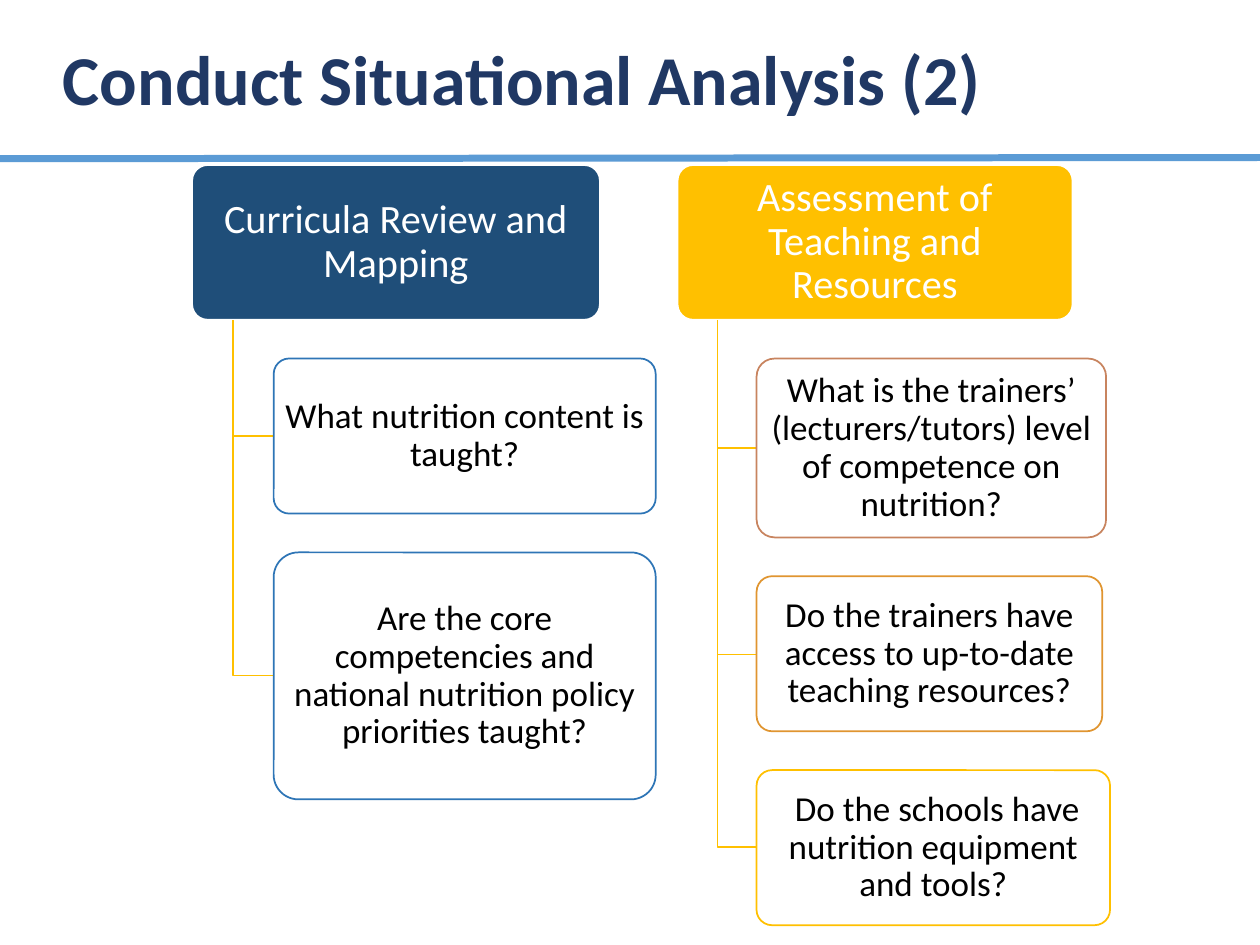
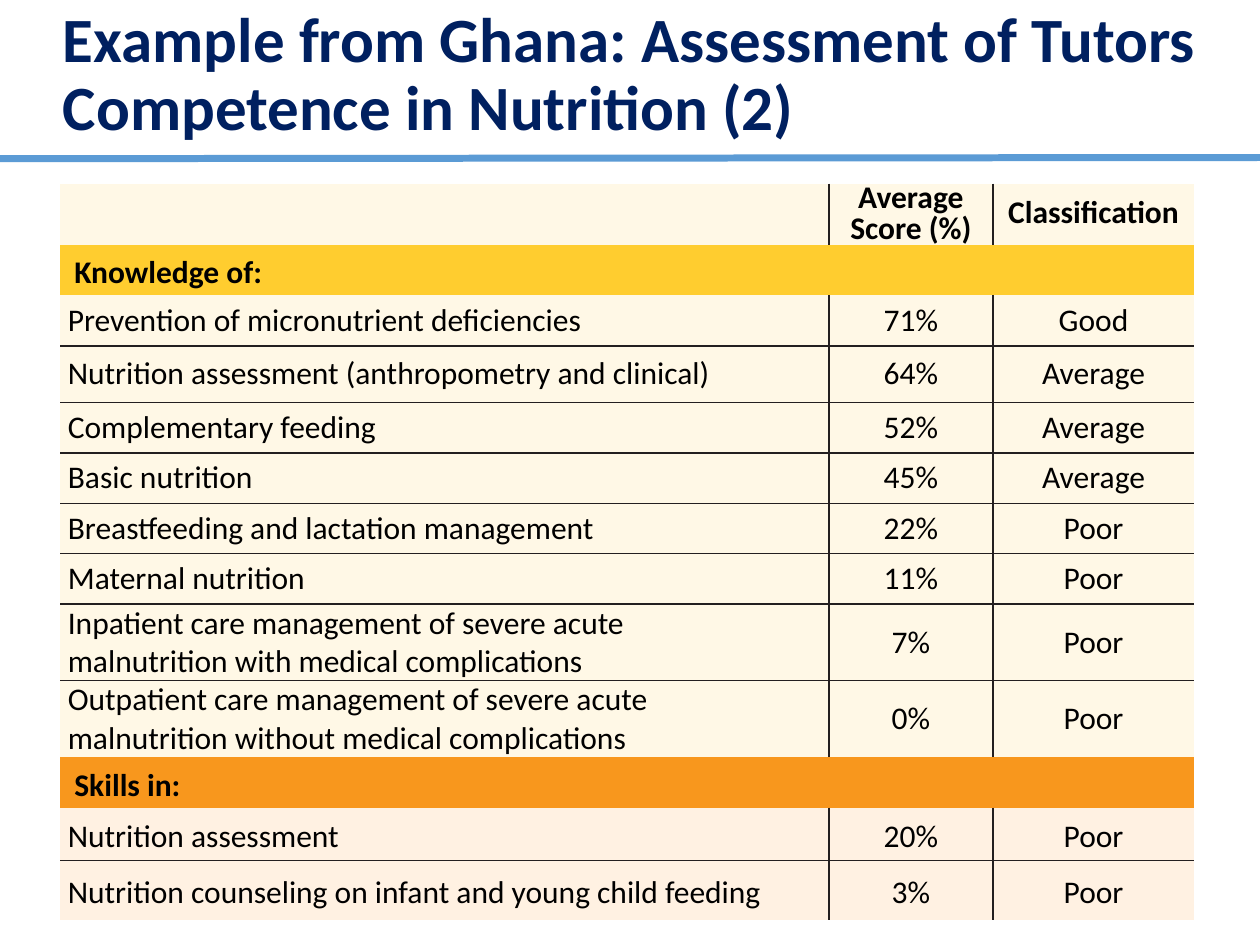
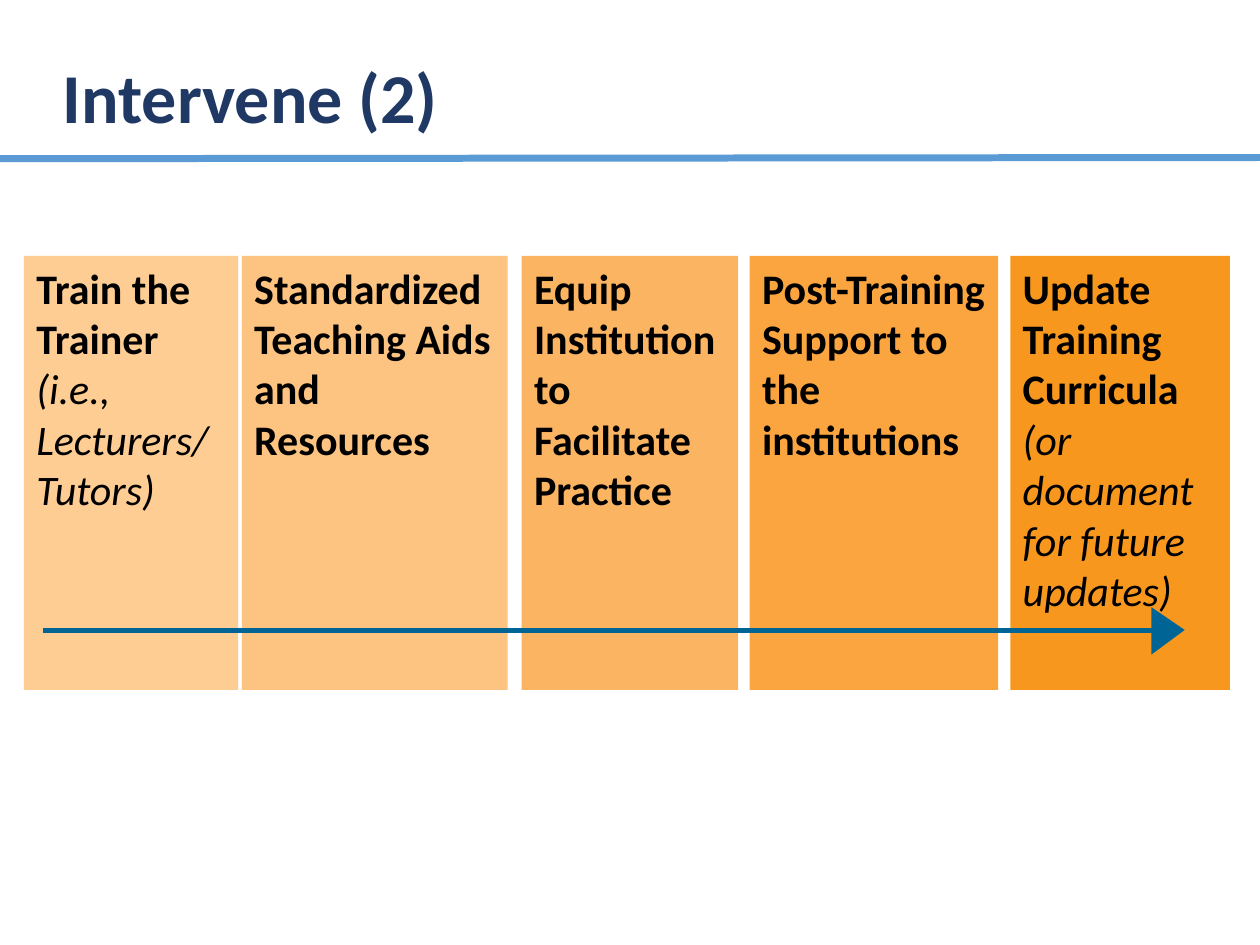
import dataclasses

import pptx
import pptx.dml.color
import pptx.enum.shapes
import pptx.enum.text
import pptx.oxml
import pptx.oxml.ns
import pptx.util

Pt = pptx.util.Pt
SHAPE = pptx.enum.shapes.MSO_SHAPE
ALIGN = pptx.enum.text.PP_ALIGN
ANCHOR = pptx.enum.text.MSO_ANCHOR


@dataclasses.dataclass(frozen=True)
class Theme:
    font: str = "Calibri"
    title: str = "203864"
    title_dark: str = "002060"
    rule: str = "5B9BD5"
    text: str = "000000"
    white: str = "FFFFFF"
    navy: str = "1F4E79"
    blue: str = "2E75B6"
    gold: str = "FFC000"
    copper: str = "C8845F"
    amber: str = "E09530"
    cell_line: str = "231F20"
    cream: str = "FFF8E6"
    peach: str = "FFF1E2"
    knowledge: str = "FFCD2F"
    skills: str = "F8971D"
    arrow: str = "006594"
    steps: tuple = ("FECD94", "FDC380", "FBB461", "FAA53F", "F8971D")
    title_size: float = 40
    title_small: float = 36
    head_size: float = 23
    box_size: float = 20
    cell_size: float = 18
    step_size: float = 24


THEME = Theme()


def rgb(color):
    return pptx.dml.color.RGBColor.from_string(color)


def write(tf, paragraphs, size, color=THEME.text, bold=False, align=ALIGN.LEFT,
          spacing=1.0, anchor=ANCHOR.MIDDLE, insets=None):
    """Fill a text frame; a paragraph is a string or a list of (text, italic) runs."""
    tf.word_wrap = True
    tf.vertical_anchor = anchor
    if insets:
        tf.margin_left = tf.margin_right = Pt(insets[0])
        tf.margin_top = tf.margin_bottom = Pt(insets[1])
    for i, runs in enumerate(paragraphs):
        p = tf.add_paragraph() if i else tf.paragraphs[0]
        p.alignment = align
        p.line_spacing = spacing
        for text, italic in ([(runs, False)] if isinstance(runs, str) else runs):
            r = p.add_run()
            r.text = text
            r.font.name = THEME.font
            r.font.size = Pt(size)
            r.font.bold = bold and not italic
            r.font.italic = italic
            r.font.color.rgb = rgb(color)


def set_borders(cell, sides):
    """Draw the named sides (L, R, T, B) of a cell and blank the others."""
    tcPr = cell._tc.get_or_add_tcPr()
    for i, side in enumerate("LRTB"):
        paint = (f'<a:solidFill><a:srgbClr val="{THEME.cell_line}"/></a:solidFill>'
                 if side in sides else "<a:noFill/>")
        tcPr.insert(i, pptx.oxml.parse_xml(
            f'<a:ln{side} {pptx.oxml.ns.nsdecls("a")} w="{Pt(1)}">{paint}</a:ln{side}>'))


class Deck:
    def __init__(self):
        self.prs = pptx.Presentation()
        self.prs.slide_width, self.prs.slide_height = Pt(720), Pt(540)
        self.s = None

    def slide(self, title, height, size=THEME.title_size, color=THEME.title):
        """Start a slide with its title, centred in the given height, and the rule."""
        self.s = self.prs.slides.add_slide(self.prs.slide_layouts[6])
        sp = self.s.shapes.add_textbox(0, 0, Pt(720), Pt(height))
        write(sp.text_frame, [title], size, color, bold=True, spacing=0.9, insets=(36, 3.6))
        self.line(0, 90.7, 720, 90, THEME.rule, 4)

    def line(self, x1, y1, x2, y2, color, width):
        sp = self.s.shapes.add_connector(
            pptx.enum.shapes.MSO_CONNECTOR.STRAIGHT, Pt(x1), Pt(y1), Pt(x2), Pt(y2))
        sp.line.color.rgb = rgb(color)
        sp.line.width = Pt(width)
        sp._element.spPr.append(
            pptx.oxml.parse_xml(f'<a:effectLst {pptx.oxml.ns.nsdecls("a")}/>'))

    def paint(self, sp, fill=None, line=None):
        sp.shadow.inherit = False
        if fill:
            sp.fill.solid()
            sp.fill.fore_color.rgb = rgb(fill)
        else:
            sp.fill.background()
        if line:
            sp.line.color.rgb = rgb(line)
            sp.line.width = Pt(1)
        else:
            sp.line.fill.background()

    def box(self, kind, x, y, w, h, paragraphs, fill, line=None, **fmt):
        sp = self.s.shapes.add_shape(kind, Pt(x), Pt(y), Pt(w), Pt(h))
        if kind == SHAPE.ROUNDED_RECTANGLE:
            sp.adjustments[0] = 0.1
        self.paint(sp, fill, line)
        write(sp.text_frame, paragraphs, **fmt)

    def outline(self, points, fill=None, line=None, close=False):
        fb = self.s.shapes.build_freeform(*points[0], scale=Pt(1))
        fb.add_line_segments(points[1:], close=close)
        self.paint(fb.convert_to_shape(), fill, line)

    def table(self, x, y, widths, heights):
        table = self.s.shapes.add_table(
            len(heights), len(widths), Pt(x), Pt(y), Pt(sum(widths)), Pt(sum(heights))).table
        table.first_row = table.horz_banding = False
        for column, width in zip(table.columns, widths):
            column.width = Pt(width)
        for row, height in zip(table.rows, heights):
            row.height = Pt(height)
        return table

    def cell(self, cell, paragraphs, fill, sides="", left=0, right=0, **fmt):
        cell.fill.solid()
        cell.fill.fore_color.rgb = rgb(fill)
        set_borders(cell, sides)
        cell.margin_left, cell.margin_right = Pt(left), Pt(right)
        cell.margin_top = cell.margin_bottom = 0
        cell.vertical_anchor = ANCHOR.MIDDLE
        write(cell.text_frame, paragraphs, THEME.cell_size, anchor=None, **fmt)


def branch(deck, x, w, head, fill, children):
    """Draw a heading and, below it, its children joined to one trunk."""
    top, head_h, gap = 94.3, 88.4, 22.2
    style = dict(align=ALIGN.CENTER, spacing=0.9, insets=(3, 2))
    bottom = top + head_h
    trunk, left = x + 0.1 * w, x + 0.2 * w
    y = bottom + gap
    deck.box(SHAPE.ROUNDED_RECTANGLE, x, top, w, head_h, [head], fill, THEME.white,
             size=THEME.head_size, color=THEME.white, **style)
    for text, child_w, child_h, line in children:
        middle = y + child_h / 2
        deck.outline([(trunk, bottom), (trunk, middle), (left, middle)], line=THEME.gold)
        deck.box(SHAPE.ROUNDED_RECTANGLE, left, y, child_w, child_h, [text], THEME.white, line,
                 size=THEME.box_size, **style)
        y += child_h + gap


def situational_analysis(deck):
    deck.slide("Conduct Situational Analysis (2)", 94.3)
    branch(deck, 109.8, 233, "Curricula Review and Mapping", THEME.navy, [
        ("What nutrition content is taught?", 218.3, 88.6, THEME.blue),
        ("Are the core competencies and national nutrition policy priorities taught?",
         218.3, 141.1, THEME.blue),
    ])
    branch(deck, 387.2, 225.7, "Assessment of Teaching and Resources", THEME.gold, [
        ("What is the trainers’ (lecturers/tutors) level of competence on nutrition?",
         199.7, 102.2, THEME.copper),
        ("Do the trainers have access to up-to-date teaching resources?",
         197.5, 88.6, THEME.amber),
        (" Do the schools have nutrition equipment and tools?", 202, 88.6, THEME.gold),
    ])


def tutor_competence(deck):
    sections = [
        ("Knowledge of:", THEME.knowledge, THEME.cream, 1.0, [
            ("Prevention of micronutrient deficiencies", "71%", "Good", 28.8),
            ("Nutrition assessment (anthropometry and clinical)", "64%", "Average", 32.4),
            ("Complementary feeding", "52%", "Average", 28.8),
            ("Basic nutrition", "45%", "Average", 28.8),
            ("Breastfeeding and lactation management", "22%", "Poor", 28.8),
            ("Maternal nutrition", "11%", "Poor", 28.8),
            ("Inpatient care management of severe acute malnutrition with medical complications",
             "7%", "Poor", 43.8),
            ("Outpatient care management of severe acute malnutrition without medical "
             "complications", "0%", "Poor", 43.8),
        ]),
        ("Skills in:", THEME.skills, THEME.peach, 1.15, [
            ("Nutrition assessment", "20%", "Poor", 30.2),
            ("Nutrition counseling on infant and young child feeding", "3%", "Poor", 33.8),
        ]),
    ]
    verticals = ("R", "LR", "L")
    deck.slide("Example from Ghana: Assessment of Tutors Competence in Nutrition (2)", 87,
               THEME.title_small, THEME.title_dark)
    heights = [35]
    for *_, rows in sections:
        heights += [28.8] + [row[-1] for row in rows]
    table = deck.table(34.5, 105, [439.2, 93.6, 115.2], heights)

    heads = ([""], ["Average", "Score (%)"], ["Classification"])
    for col, head in enumerate(heads):
        deck.cell(table.cell(0, col), head, THEME.cream, verticals[col],
                  bold=True, align=ALIGN.CENTER, spacing=0.8)
    row = 1
    for label, band, fill, spacing, rows in sections:
        table.cell(row, 0).merge(table.cell(row, 2))
        deck.cell(table.cell(row, 0), [label], band, left=8, bold=True, spacing=1.15)
        for i, (*values, _) in enumerate(rows):
            row += 1
            level = ("T" if i else "") + ("B" if i < len(rows) - 1 else "")
            for col, value in enumerate(values):
                place = dict(align=ALIGN.CENTER) if col else dict(left=4.3, right=30)
                deck.cell(table.cell(row, col), [value], fill, verticals[col] + level,
                          spacing=spacing, **place)
        row += 1


def intervene(deck):
    deck.slide("Intervene (2)", 115.2)
    steps = [
        (13.7, 122.4, [("Train the Trainer ", False), ("(i.e., Lecturers/ Tutors)", True)]),
        (138.2, 152, "Standardized Teaching Aids and Resources"),
        (298.1, 123.8, "Equip Institution to Facilitate Practice"),
        (428.4, 142, "Post-Training Support to the institutions"),
        (577.3, 125.5, [("Update Training Curricula ", False),
                        ("(or document for future updates)", True)]),
    ]
    for (x, w, text), fill in zip(steps, THEME.steps):
        deck.box(SHAPE.RECTANGLE, x, 146.2, w, 248, [text], fill, size=THEME.step_size,
                 bold=True, anchor=ANCHOR.TOP, insets=(7.2, 3.6))
    y, tip = 360.4, 676.8
    deck.line(24.5, y, tip - 18, y, THEME.arrow, 3)
    deck.outline([(tip - 19, y - 13.4), (tip - 19, y + 13.4), (tip, y)],
                 fill=THEME.arrow, close=True)


def main():
    deck = Deck()
    situational_analysis(deck)
    tutor_competence(deck)
    intervene(deck)
    deck.prs.save("out.pptx")


if __name__ == "__main__":
    main()
